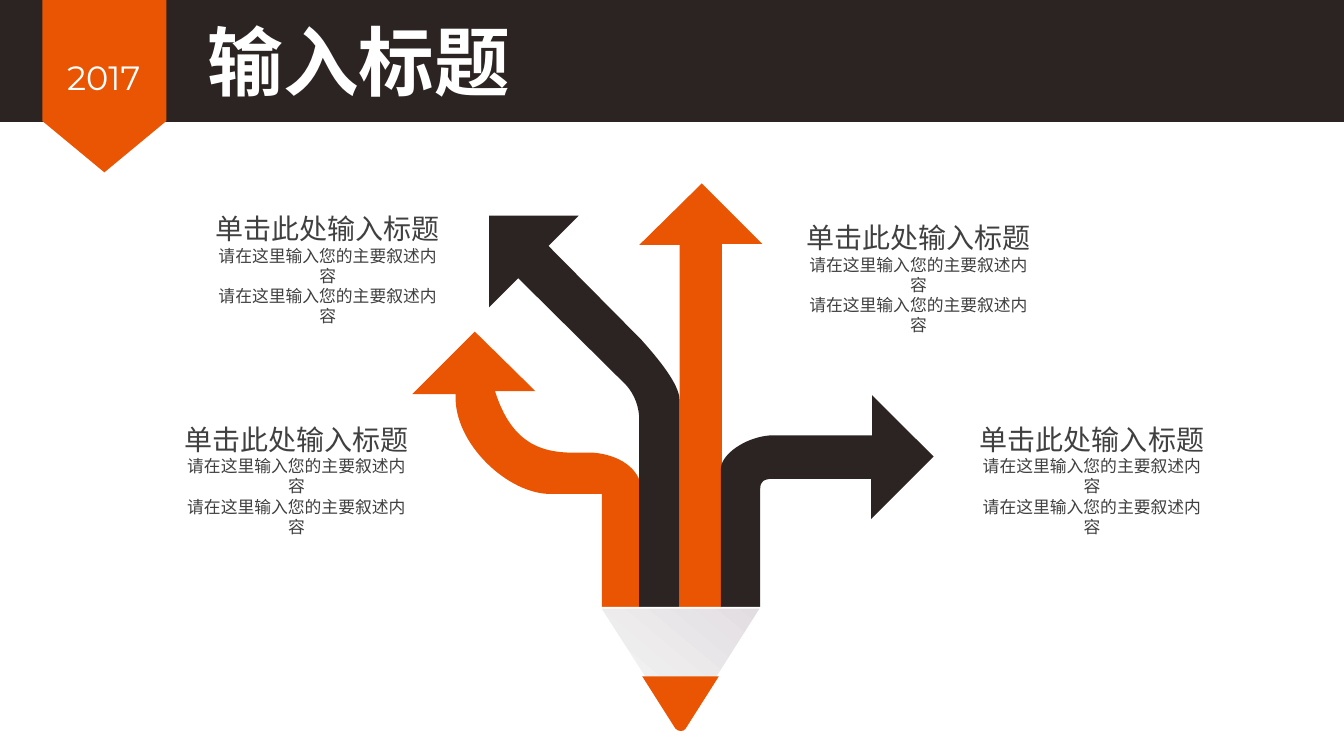
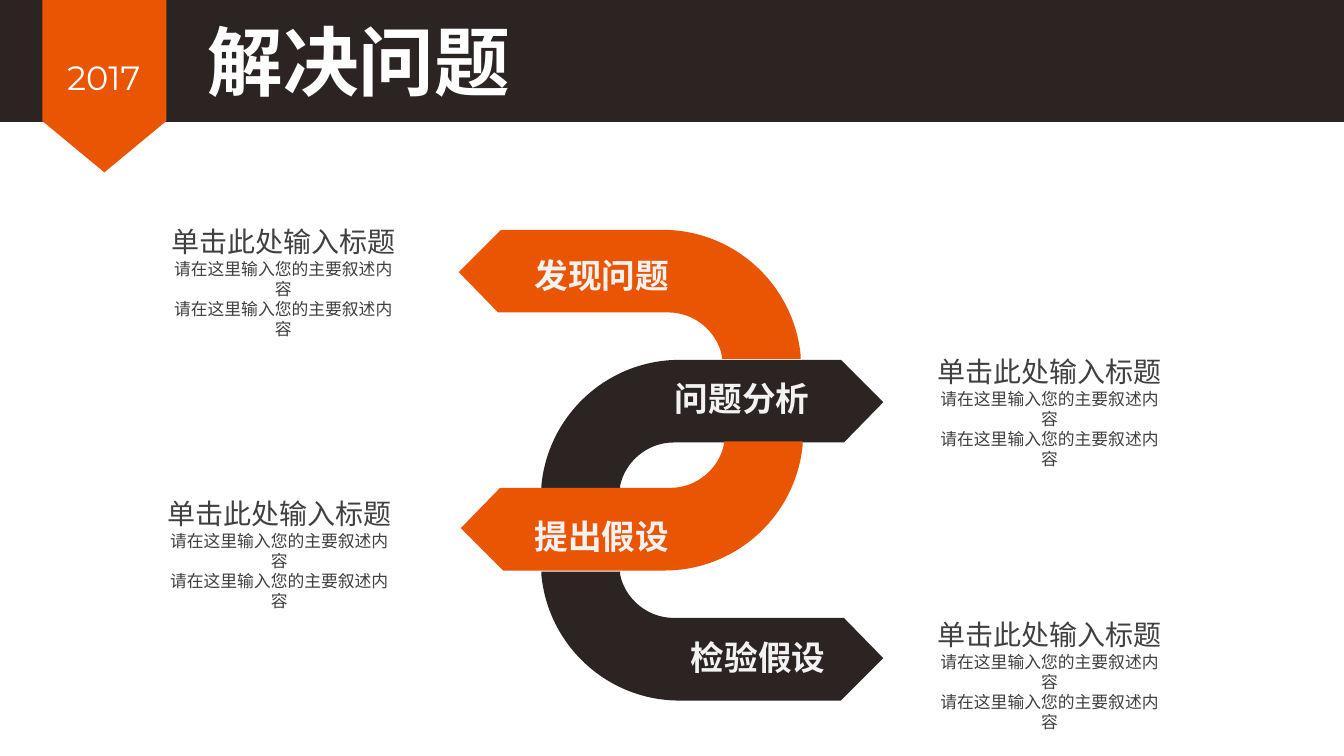
from dataclasses import dataclass

from lxml import etree
from pptx import Presentation
from pptx import util as u
from pptx.dml.color import RGBColor
from pptx.enum import shapes, text
from pptx.oxml import ns


@dataclass(frozen=True)
class Theme:
    dark: str = "2C2422"
    accent: str = "EA5503"
    white: str = "FFFFFF"
    label: str = "F2F2F2"
    body: str = "404040"
    cone: tuple = ((0, "E2DDE1"), (0.76, "F2F2F2"))
    cjk: str = "Noto Sans CJK SC"
    year_font: str = "Montserrat"
    label_font: str = "Arial"
    title_size: int = 54
    label_size: int = 24
    heading_size: int = 20
    body_size: int = 12
    leading: float = 1.2


T = Theme()
WIDTH, HEIGHT = 13.33, 7.5
BAND_H = 1.21
CAPTION_W, CAPTION_H = 2.52, 1.38
RIBBON_W, RIBBON_H = 3.39, 1.28

CAPTION = ("单击此处输入标题", "请在这里输入您的主要叙述内容", "请在这里输入您的主要叙述内容")

# Outlines are in inches from the top left of their box:
# two numbers are a corner, six are a cubic curve.
RIBBON = [(0.42, 0), (2.02, 0), (2.73, 0, 3.32, 0.54, 3.39, 1.24),
          (3.39, 1.28), (2.61, 1.28), (2.61, 1.25),
          (2.56, 1.01, 2.34, 0.82, 2.08, 0.82), (0.39, 0.82), (0, 0.42)]

CURL_ARROW = [(2.26, 4.22), (1.88, 4.22), (1.88, 3.08), (1.38, 3.08),
              (0.95, 3.09, 0.4, 2.57, 0.43, 2.09), (0, 2.09), (0.62, 1.47),
              (1.22, 2.06), (0.82, 2.06),
              (1.03, 2.73, 1.46, 2.67, 1.79, 2.67),
              (2.05, 2.69, 2.26, 2.83, 2.27, 3.03)]
DIAGONAL_ARROW = [(2.25, 4.22), (2.25, 2.34),
                  (2.25, 2.23, 2.21, 2.1, 2.12, 2), (1.05, 0.94),
                  (0.76, 1.23), (0.76, 0.32), (1.65, 0.32), (1.35, 0.62),
                  (2.27, 1.55), (2.43, 1.73, 2.65, 1.99, 2.65, 2.15),
                  (2.65, 4.22)]
UP_ARROW = [(3.07, 4.22), (3.07, 0.6), (3.47, 0.6), (2.87, 0),
            (2.25, 0.61), (2.65, 0.61), (2.65, 4.22)]
RIGHT_ARROW = [(3.45, 4.22), (3.45, 3.03),
               (3.45, 2.96, 3.48, 2.93, 3.58, 2.93), (4.55, 2.93),
               (4.55, 3.33), (5.17, 2.71), (4.56, 2.1), (4.56, 2.5),
               (3.54, 2.5), (3.3, 2.52, 3.06, 2.69, 3.06, 2.83),
               (3.06, 4.22)]
CONE = [(1.86, 4.21), (3.46, 4.21), (2.77, 5.3),
        (2.73, 5.37, 2.61, 5.37, 2.56, 5.3)]
TIP = [(2.28, 4.89), (3.04, 4.89), (2.71, 5.41),
       (2.69, 5.44, 2.64, 5.44, 2.61, 5.41)]


def inches(*values):
    return [u.Inches(v) for v in values]


def paint(sp, color):
    sp.shadow.inherit = False
    sp.fill.solid()
    sp.fill.fore_color.rgb = RGBColor.from_string(color)
    sp.line.fill.background()


def style(p, size, color, font=T.cjk, bold=False, align=text.PP_ALIGN.CENTER):
    """Format a whole paragraph, East Asian font included."""
    p.alignment = align
    p.font.size = u.Pt(size)
    p.font.bold = bold
    p.font.color.rgb = RGBColor.from_string(color)
    p.font.name = font
    props = p._p.get_or_add_pPr().get_or_add_defRPr()
    etree.SubElement(props, ns.qn("a:ea"), typeface=T.cjk)


def add_text(slide, box, lines, anchor=text.MSO_ANCHOR.MIDDLE):
    tf = slide.shapes.add_textbox(*inches(*box)).text_frame
    tf.word_wrap = False
    tf.vertical_anchor = anchor
    tf.text = "\n".join(lines)
    return tf.paragraphs


def mirror(outline, flip_x, flip_y):
    """Flip a ribbon outline within its box."""
    size, flips = (RIBBON_W, RIBBON_H), (flip_x, flip_y)
    return [tuple(size[i % 2] - v if flips[i % 2] else v
                  for i, v in enumerate(part)) for part in outline]


def add_outline(slide, outline, left, top, color):
    points = [inches(left + part[i], top + part[i + 1])
              for part in outline for i in range(0, len(part), 2)]
    builder = slide.shapes.build_freeform(*points[0])
    builder.add_line_segments(points[1:], close=True)
    sp = builder.convert_to_shape()
    segments = iter(list(sp._element.iter(ns.qn("a:lnTo"))))
    for part in outline[1:]:
        first = next(segments)
        if len(part) == 6:  # merge three segments into one cubic curve
            first.tag = ns.qn("a:cubicBezTo")
            for _ in range(2):
                segment = next(segments)
                first.append(segment[0])
                segment.getparent().remove(segment)
    paint(sp, color)
    return sp


def add_header(slide, title):
    band = slide.shapes.add_shape(shapes.MSO_SHAPE.RECTANGLE,
                                  *inches(0, 0, WIDTH, BAND_H))
    paint(band, T.dark)
    ribbon = slide.shapes.add_shape(shapes.MSO_SHAPE.PENTAGON,
                                    *inches(0.18, 0.24, 1.71, 1.23))
    ribbon.rotation = 90
    ribbon.adjustments[0] = 0.414
    paint(ribbon, T.accent)
    year, = add_text(slide, (0.48, 0.51, 1.1, 0.5), ["2017"])
    style(year, T.label_size, T.white, T.year_font)

    sp = slide.shapes.title
    sp.left, sp.top, sp.width, sp.height = inches(1.99, 0.04, 4.63, 1.12)
    tf = sp.text_frame
    tf.auto_size = text.MSO_AUTO_SIZE.NONE
    tf.vertical_anchor = text.MSO_ANCHOR.MIDDLE
    tf.margin_left = tf.margin_right = u.Inches(0.07)
    tf.margin_top = tf.margin_bottom = 0
    tf.text = title
    style(tf.paragraphs[0], T.title_size, T.white, bold=True,
          align=text.PP_ALIGN.LEFT)
    slide.shapes._spTree.append(sp._element)  # bring the title above the band


def add_caption(slide, left, top):
    paragraphs = add_text(slide, (left, top, CAPTION_W, CAPTION_H), CAPTION,
                          text.MSO_ANCHOR.TOP)
    for i, p in enumerate(paragraphs):
        size = T.body_size if i else T.heading_size
        p.line_spacing = u.Pt(size * T.leading)
        style(p, size, T.body)


def add_pencil(slide, left, top):
    for outline, color in ((CURL_ARROW, T.accent), (DIAGONAL_ARROW, T.dark),
                           (UP_ARROW, T.accent), (RIGHT_ARROW, T.dark)):
        add_outline(slide, outline, left, top, color)
    cone = add_outline(slide, CONE, left, top, T.white)
    cone.fill.gradient()
    cone.fill.gradient_angle = 230
    for stop, (position, color) in zip(cone.fill.gradient_stops, T.cone):
        stop.position = position
        stop.color.rgb = RGBColor.from_string(color)
    cone.line.color.rgb = RGBColor.from_string(T.white)
    cone.line.width = u.Pt(1.25)
    add_outline(slide, TIP, left, top, T.accent)


def add_ribbon(slide, left, top, color, label, label_at, flip_x, flip_y):
    """Add a bent arrow; label_at is the label's centre within its box."""
    add_outline(slide, mirror(RIBBON, flip_x, flip_y), left, top, color)
    x, y = label_at
    w, h = 1.55, 0.54
    p, = add_text(slide, (left + x - w / 2, top + y - h / 2, w, h), [label])
    style(p, T.label_size, T.label, T.label_font, bold=True)


def new_slide(prs, title):
    slide = prs.slides.add_slide(prs.slide_layouts[5])
    add_header(slide, title)
    return slide


def pencil_slide(prs):
    slide = new_slide(prs, "输入标题")
    add_pencil(slide, 4.09, 1.82)
    for left, top in ((9.57, 4.14), (1.99, 2.05), (1.68, 4.14), (7.85, 2.14)):
        add_caption(slide, left, top)


def ribbon_slide(prs):
    slide = new_slide(prs, "解决问题")
    left, right = 4.55, 5.37
    for ribbon in (
            (left, 2.28, T.accent, "发现问题", (1.42, 0.45), False, False),
            (right, 3.57, T.dark, "问题分析", (1.99, 0.38), True, False),
            (left + 0.02, 4.38, T.accent, "提出假设", (1.4, 0.94), False, True),
            (right, 5.67, T.dark, "检验假设", (2.15, 0.85), True, True)):
        add_ribbon(slide, *ribbon)
    for left, top in ((9.15, 6.08), (1.55, 2.18), (1.51, 4.88), (9.15, 3.47)):
        add_caption(slide, left, top)


def main():
    prs = Presentation()
    prs.slide_width, prs.slide_height = inches(WIDTH, HEIGHT)
    pencil_slide(prs)
    ribbon_slide(prs)
    prs.save("out.pptx")


if __name__ == "__main__":
    main()
